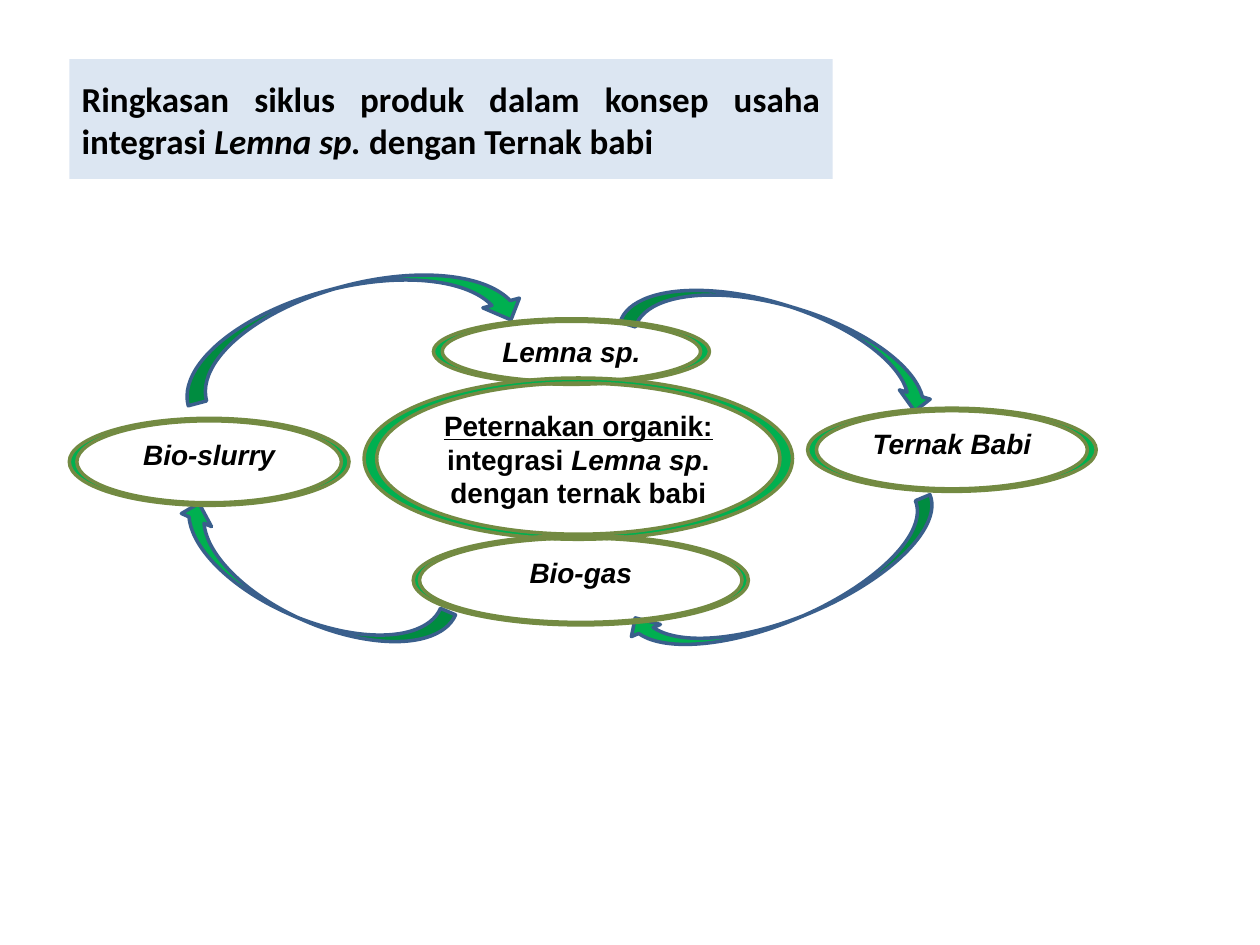
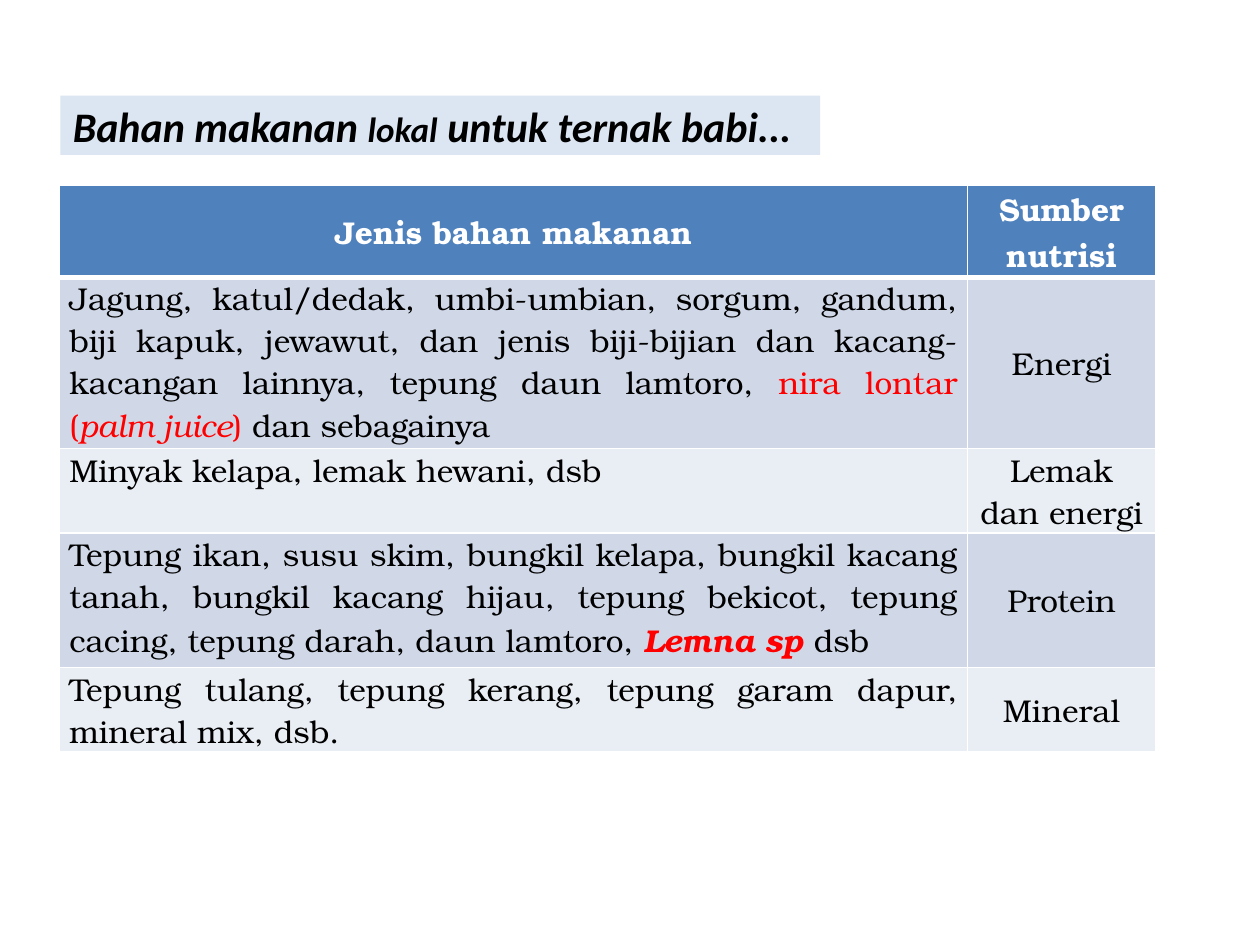
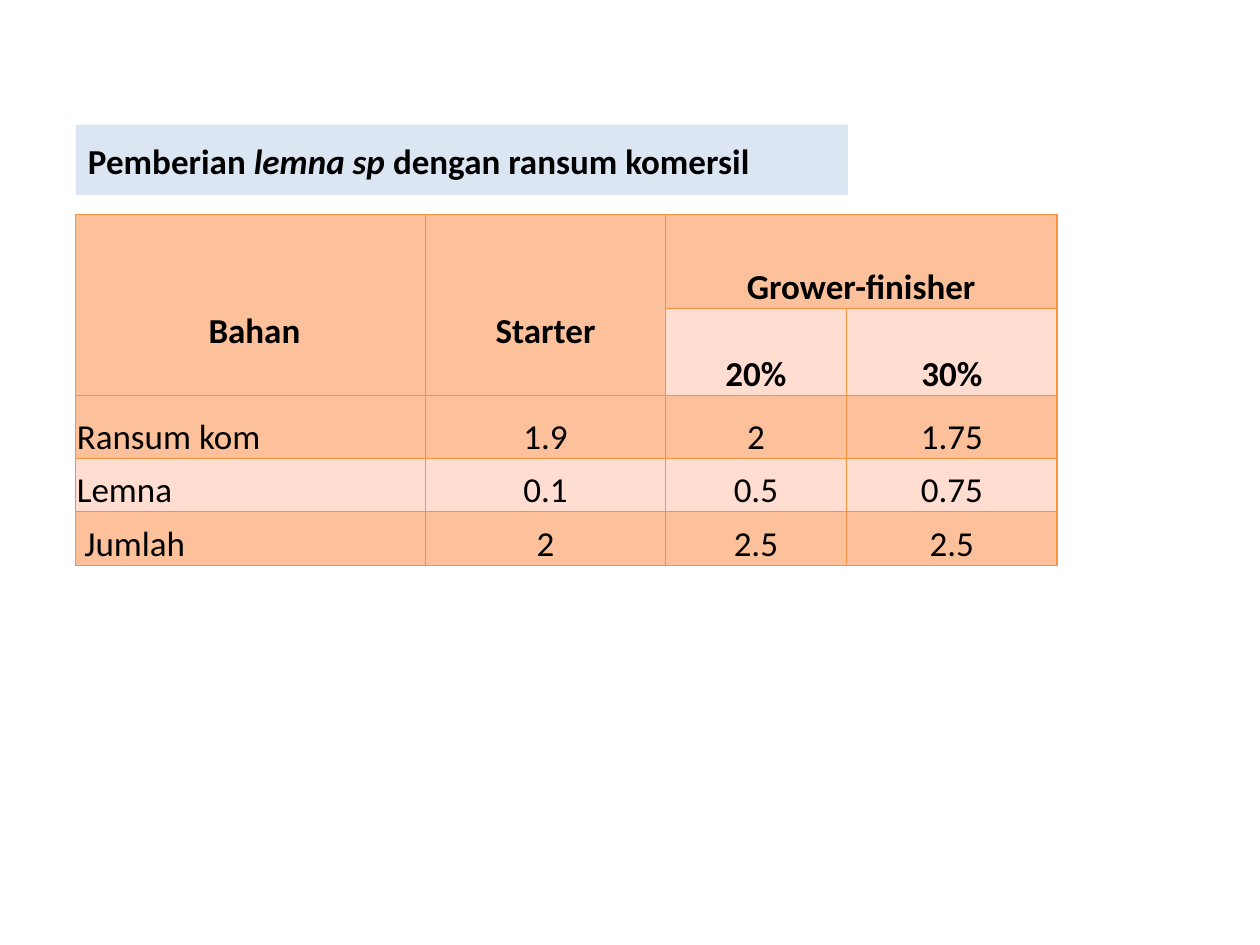
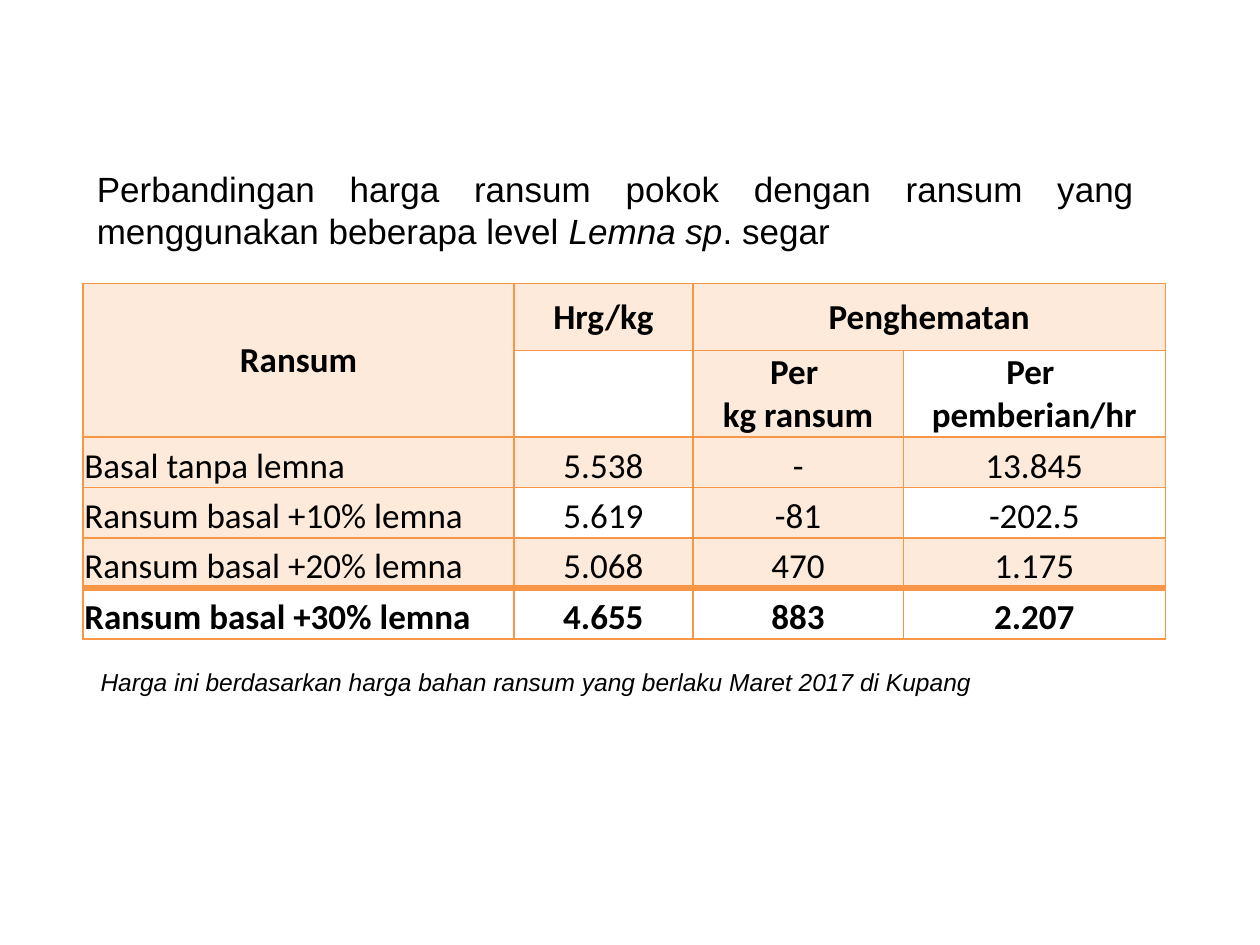
"""Build four slides on integrating Lemna sp. with pig farming."""
from dataclasses import dataclass
from typing import Callable, NamedTuple, Optional

from lxml import etree
from pptx import Presentation
from pptx.dml.color import RGBColor
from pptx.enum.shapes import MSO_SHAPE
from pptx.enum.text import MSO_ANCHOR, PP_ALIGN
from pptx.oxml.ns import qn
from pptx.util import Inches, Pt

TOP, MIDDLE, BOTTOM = MSO_ANCHOR.TOP, MSO_ANCHOR.MIDDLE, MSO_ANCHOR.BOTTOM
LEFT, CENTER, JUSTIFY = PP_ALIGN.LEFT, PP_ALIGN.CENTER, PP_ALIGN.JUSTIFY
CURVED_ARROW = MSO_SHAPE.CURVED_UP_ARROW
RECTANGLE = MSO_SHAPE.RECTANGLE

SANS, TITLE_FONT, SERIF = "Arial", "Calibri", "TeX Gyre Bonum"
BLACK, WHITE, RED = "000000", "FFFFFF", "FF0000"
BAND, GREEN, OLIVE, NAVY = "DCE6F2", "00B050", "738A42", "3A5F8C"
BLUE, BLUE_MID, BLUE_PALE = "4F81BD", "D0D8E8", "E9EDF4"
ORANGE, PEACH, PEACH_PALE, CREAM = "F79646", "FCC19A", "FFDDD0", "FDEADA"
ELLIPSE_INSET = 0.15
CURVE = 0.55


class Box(NamedTuple):
    """A frame in inches."""
    left: float
    top: float
    width: float
    height: float


class Run(NamedTuple):
    """A piece of text and what sets it apart from its surroundings."""
    text: str
    bold: Optional[bool] = None
    italic: Optional[bool] = None
    underline: Optional[bool] = None
    color: Optional[str] = None
    size: Optional[float] = None


class Style(NamedTuple):
    """The common look of a text."""
    font: str
    size: float
    bold: bool = False
    italic: bool = False
    color: str = BLACK
    align: PP_ALIGN = CENTER


class Arrow(NamedTuple):
    """A curved arrow of the cycle."""
    box: Box
    rotation: float


class Ring(NamedTuple):
    """An elliptical ring with its wall thickness and label."""
    box: Box
    wall_x: float
    wall_y: float
    runs: list
    italic: bool = True


@dataclass
class TableSpec:
    """The layout, rules and contents of a table."""
    left: float
    top: float
    cols: list
    rows: list
    cells: list
    style: Style
    fill: Callable[[int, int], Optional[str]]
    line: str
    line_width: float
    margins: tuple
    header_rows: int
    header_color: str = BLACK
    header_anchor: MSO_ANCHOR = MIDDLE
    body_anchor: MSO_ANCHOR = BOTTOM
    first_anchor: MSO_ANCHOR = BOTTOM
    first_align: PP_ALIGN = LEFT
    thick_row: int = -1
    thick_width: float = 0
    bold_rows: tuple = ()
    spans: tuple = ()


def rgb(color: str) -> RGBColor:
    """Turn a hex string into a colour."""
    return RGBColor.from_string(color)


def inches(values) -> list:
    """Turn numbers into lengths."""
    return [Inches(v) for v in values]


def write(tf, paragraphs: list, style: Style) -> None:
    """Fill a text frame with paragraphs, each a string or a list of runs."""
    tf.word_wrap = True
    for i, content in enumerate(paragraphs):
        p = tf.paragraphs[0] if i == 0 else tf.add_paragraph()
        p.alignment = style.align
        for piece in [Run(content)] if isinstance(content, str) else content:
            r = p.add_run()
            r.text = piece.text
            f = r.font
            f.name = style.font
            f.size = Pt(piece.size or style.size)
            f.bold = style.bold if piece.bold is None else piece.bold
            f.italic = style.italic if piece.italic is None else piece.italic
            f.underline = piece.underline
            f.color.rgb = rgb(piece.color or style.color)


def add_label(s, box: Box, runs: list, style: Style) -> None:
    """Add a vertically centred text."""
    sp = s.shapes.add_textbox(*inches(box))
    sp.text_frame.vertical_anchor = MIDDLE
    write(sp.text_frame, [runs], style)


def add_title(s, box: Box, runs: list, size: float = 20, italic: bool = False) -> None:
    """Add the bold title on its pale band."""
    sp = s.shapes.add_shape(RECTANGLE, *inches(box))
    sp.shadow.inherit = False
    sp.fill.solid()
    sp.fill.fore_color.rgb = rgb(BAND)
    sp.line.fill.background()
    sp.text_frame.vertical_anchor = MIDDLE
    write(sp.text_frame, [runs], Style(TITLE_FONT, size, True, italic, align=JUSTIFY))


def paint(sp, line: str) -> None:
    """Give a cycle shape its green fill and its outline."""
    sp.shadow.inherit = False
    sp.fill.solid()
    sp.fill.fore_color.rgb = rgb(GREEN)
    sp.line.color.rgb = rgb(line)
    sp.line.width = Pt(2)


def add_arrow(s, arrow: Arrow) -> None:
    """Add a mirrored, rotated curved arrow."""
    sp = s.shapes.add_shape(CURVED_ARROW, *inches(arrow.box))
    sp.rotation = arrow.rotation
    sp.element.spPr.find(qn("a:xfrm")).set("flipH", "1")
    paint(sp, NAVY)


def ellipse(box: Box, wall_x: float, wall_y: float, turn: int) -> list:
    """Return the curve points of an ellipse inset in a box, from its left end."""
    cx, cy = box.left + box.width / 2, box.top + box.height / 2
    rx, ry = box.width / 2 - wall_x, (box.height / 2 - wall_y) * turn
    unit = [(-1, 0), (-1, -CURVE), (-CURVE, -1), (0, -1), (CURVE, -1), (1, -CURVE)]
    unit += [(-x, -y) for x, y in unit] + unit[:1]
    return [(Inches(cx + rx * x), Inches(cy + ry * y)) for x, y in unit]


def bend(sp) -> None:
    """Join each three straight segments of a freeform into one curve."""
    lines = list(sp.element.spPr.iter(qn("a:lnTo")))
    for i in range(0, len(lines), 3):
        lines[i].addprevious(curve := etree.Element(qn("a:cubicBezTo")))
        for line in lines[i:i + 3]:
            curve.append(line[0])
            line.getparent().remove(line)


def add_ring(s, ring: Ring) -> None:
    """Add an elliptical ring with its label inside."""
    box = ring.box
    outer = ellipse(box, 0, 0, 1)
    inner = ellipse(box, ring.wall_x, ring.wall_y, -1)
    builder = s.shapes.build_freeform(*outer[0])
    builder.add_line_segments(outer[1:], close=True)
    builder.move_to(*inner[0])
    builder.add_line_segments(inner[1:], close=True)
    sp = builder.convert_to_shape()
    bend(sp)
    paint(sp, OLIVE)
    tf = sp.text_frame
    tf.vertical_anchor = TOP
    tf.margin_left = tf.margin_right = Inches(ELLIPSE_INSET * box.width + 0.1)
    tf.margin_top = tf.margin_bottom = Inches(ELLIPSE_INSET * box.height + 0.05)
    write(tf, [ring.runs], Style(SANS, 16, True, ring.italic))
    tf.paragraphs[0].space_after = Pt(10)


def set_borders(cell, color: str, widths: dict) -> None:
    """Draw the four borders of a cell."""
    tc_pr = cell._tc.get_or_add_tcPr()
    for side in ("L", "R", "T", "B"):
        ln = etree.SubElement(tc_pr, qn("a:ln" + side), w=str(Pt(widths[side])))
        solid = etree.SubElement(ln, qn("a:solidFill"))
        etree.SubElement(solid, qn("a:srgbClr"), val=color)


def format_cell(cell, spec: TableSpec, row: int, col: int) -> None:
    """Set the borders, fill and text of one cell."""
    widths = dict.fromkeys("LRTB", spec.line_width)
    if row == spec.thick_row:
        widths["T"] = spec.thick_width
    if row + 1 == spec.thick_row:
        widths["B"] = spec.thick_width
    set_borders(cell, spec.line, widths)
    fill = spec.fill(row, col)
    if fill:
        cell.fill.solid()
        cell.fill.fore_color.rgb = rgb(fill)
    else:
        cell.fill.background()
    (cell.margin_left, cell.margin_top,
     cell.margin_right, cell.margin_bottom) = inches(spec.margins)
    style = spec.style
    if row < spec.header_rows:
        cell.vertical_anchor = spec.header_anchor
        style = style._replace(bold=True, color=spec.header_color)
    else:
        cell.vertical_anchor = spec.body_anchor if col else spec.first_anchor
        style = style._replace(bold=row in spec.bold_rows,
                               align=CENTER if col else spec.first_align)
    content = spec.cells[row][col]
    if content:
        write(cell.text_frame, content if isinstance(content, list) else [content], style)


def add_table(s, spec: TableSpec):
    """Add a table and return it."""
    frame = s.shapes.add_table(len(spec.rows), len(spec.cols), Inches(spec.left),
                               Inches(spec.top), Inches(sum(spec.cols)),
                               Inches(sum(spec.rows)))
    table = frame.table
    table.first_row = table.horz_banding = False
    for column, width in zip(table.columns, spec.cols):
        column.width = Inches(width)
    for row, height in zip(table.rows, spec.rows):
        row.height = Inches(height)
    for i in range(len(spec.rows)):
        for j in range(len(spec.cols)):
            format_cell(table.cell(i, j), spec, i, j)
    for first, last in spec.spans:
        table.cell(*first).merge(table.cell(*last))
    return table


def build_cycle(s) -> None:
    """Draw the product cycle."""
    add_title(s, Box(0.55, 0.47, 6.06, 0.95), [
        Run("Ringkasan siklus produk dalam konsep usaha integrasi "),
        Run("Lemna sp. ", italic=True), Run("dengan Ternak babi")])
    arrows = [
        Arrow(Box(1.26, 4.39, 2.35, 0.52), 23.5),
        Arrow(Box(4.92, 4.42, 2.66, 0.5), 337.3),
        Arrow(Box(1.37, 2.27, 2.8, 0.6), 165.1),
        Arrow(Box(4.94, 2.43, 2.57, 0.51), 196.8),
    ]
    rings = [
        Ring(Box(6.41, 3.24, 2.29, 0.66), 0.07, 0.02, [Run("Ternak Babi")]),
        Ring(Box(3.44, 2.53, 2.19, 0.52), 0.07, 0.02, [Run("Lemna sp.")]),
        Ring(Box(2.89, 3, 3.4, 1.28), 0.1, 0.04, [
            Run("Peternakan organik:", underline=True), Run(" integrasi "),
            Run("Lemna sp", italic=True), Run(". dengan ternak babi")], False),
        Ring(Box(0.55, 3.32, 2.22, 0.69), 0.06, 0.02, [Run("Bio-slurry")]),
        Ring(Box(3.28, 4.25, 2.66, 0.71), 0.05, 0.02, [Run("Bio-gas")]),
    ]
    for arrow in arrows:
        add_arrow(s, arrow)
    for ring in rings:
        add_ring(s, ring)


def build_feeds(s) -> None:
    """List the local feeds and what they supply."""
    add_title(s, Box(0.48, 0.76, 6.03, 0.47), [
        Run("Bahan makanan "), Run("lokal", size=20), Run(" untuk ternak babi...")], 24, True)
    cells = [
        ["Jenis bahan makanan", "Sumber nutrisi"],
        [[[Run("Jagung, katul/dedak, umbi-umbian, sorgum, gandum, biji kapuk, jewawut, "
               "dan jenis biji-bijian dan kacang-kacangan lainnya, tepung daun lamtoro, "),
           Run("nira lontar (", color=RED), Run("palm juice", italic=True, color=RED),
           Run(") ", color=RED), Run("dan sebagainya")]], "Energi"],
        ["Minyak kelapa, lemak hewani, dsb", "Lemak dan energi"],
        [[[Run("Tepung ikan, susu skim, bungkil kelapa, bungkil kacang tanah, bungkil "
               "kacang hijau, tepung bekicot, tepung cacing, tepung darah, daun lamtoro, "),
           Run("Lemna sp ", bold=True, italic=True, color=RED), Run("dsb")]], "Protein"],
        ["Tepung tulang, tepung kerang, tepung garam dapur, mineral mix, dsb.", "Mineral"],
    ]
    add_table(s, TableSpec(
        0.47, 1.47, [7.21, 1.49], [0.72, 1.36, 0.67, 1.07, 0.66], cells, Style(SERIF, 18),
        lambda row, col: BLUE if row == 0 else BLUE_MID if row % 2 else BLUE_PALE,
        WHITE, 1, (0.08, 0, 0.08, 0), header_rows=1, header_color=WHITE,
        body_anchor=MIDDLE, first_anchor=TOP, first_align=JUSTIFY,
        thick_row=1, thick_width=3))


def build_rations(s) -> None:
    """Show the amounts of Lemna mixed into the bought ration."""
    add_title(s, Box(0.6, 0.99, 6.13, 0.56), [
        Run("Pemberian "), Run("lemna sp ", italic=True), Run("dengan ransum komersil")])
    cells = [
        ["Bahan", "Starter", "Grower-finisher", None],
        [None, None, "20%", "30%"],
        ["Ransum kom", "1.9", "2", "1.75"],
        ["Lemna", "0.1", "0.5", "0.75"],
        ["Jumlah", "2", "2.5", "2.5"],
    ]
    table = add_table(s, TableSpec(
        0.6, 1.7, [2.78, 1.9, 1.44, 1.67], [0.75, 0.69, 0.5, 0.42, 0.43], cells,
        Style(TITLE_FONT, 20), lambda row, col: PEACH_PALE if row % 2 else PEACH,
        "F69240", 0.75, (0.01, 0.01, 0.01, 0), header_rows=2, header_anchor=BOTTOM,
        spans=(((0, 0), (1, 0)), ((0, 1), (1, 1)), ((0, 2), (0, 3)))))
    for col in range(2):
        table.cell(0, col).margin_bottom = Inches(0.34)
    for row in (0, 4):
        table.cell(row, 0).margin_left = Inches(0.07)


def build_prices(s) -> None:
    """Compare ration prices and savings."""
    add_label(s, Box(0.67, 1.23, 8.43, 0.87), [
        Run("Perbandingan harga ransum pokok dengan ransum yang menggunakan beberapa level "),
        Run("Lemna sp", italic=True), Run(". segar")], Style(SANS, 20, align=JUSTIFY))
    cells = [
        ["Ransum", "Hrg/kg", "Penghematan", None],
        [None, None, ["Per ", "kg ransum"], ["Per ", "pemberian/hr"]],
        ["Basal tanpa lemna", "5.538", "-", "13.845"],
        ["Ransum basal +10% lemna", "5.619", "-81", "-202.5"],
        ["Ransum basal +20% lemna", "5.068", "470", "1.175"],
        ["Ransum basal +30% lemna", "4.655", "883", "2.207"],
    ]
    last = len(cells) - 1
    add_table(s, TableSpec(
        0.66, 2.25, [3.42, 1.42, 1.67, 2.08], [0.53, 0.69] + [0.4] * 4, cells,
        Style(TITLE_FONT, 20),
        lambda row, col: CREAM if row < last and (row % 2 == 0 or col % 2 == 0) else None,
        ORANGE, 1, (0.01, 0.01, 0.01, 0), header_rows=2, thick_row=last, thick_width=4,
        bold_rows=(last,), spans=(((0, 0), (1, 0)), ((0, 2), (0, 3)))))
    add_label(s, Box(0.7, 5.21, 8.43, 0.4), [
        Run("Harga ini berdasarkan harga bahan ransum yang berlaku Maret 2017 di Kupang")],
        Style(SANS, 14, italic=True, align=JUSTIFY))


def main() -> None:
    """Build and save the presentation."""
    prs = Presentation()
    prs.slide_width, prs.slide_height = Inches(10), Inches(7.5)
    for build in (build_cycle, build_feeds, build_rations, build_prices):
        build(prs.slides.add_slide(prs.slide_layouts[6]))
    prs.save("out.pptx")


if __name__ == "__main__":
    main()
